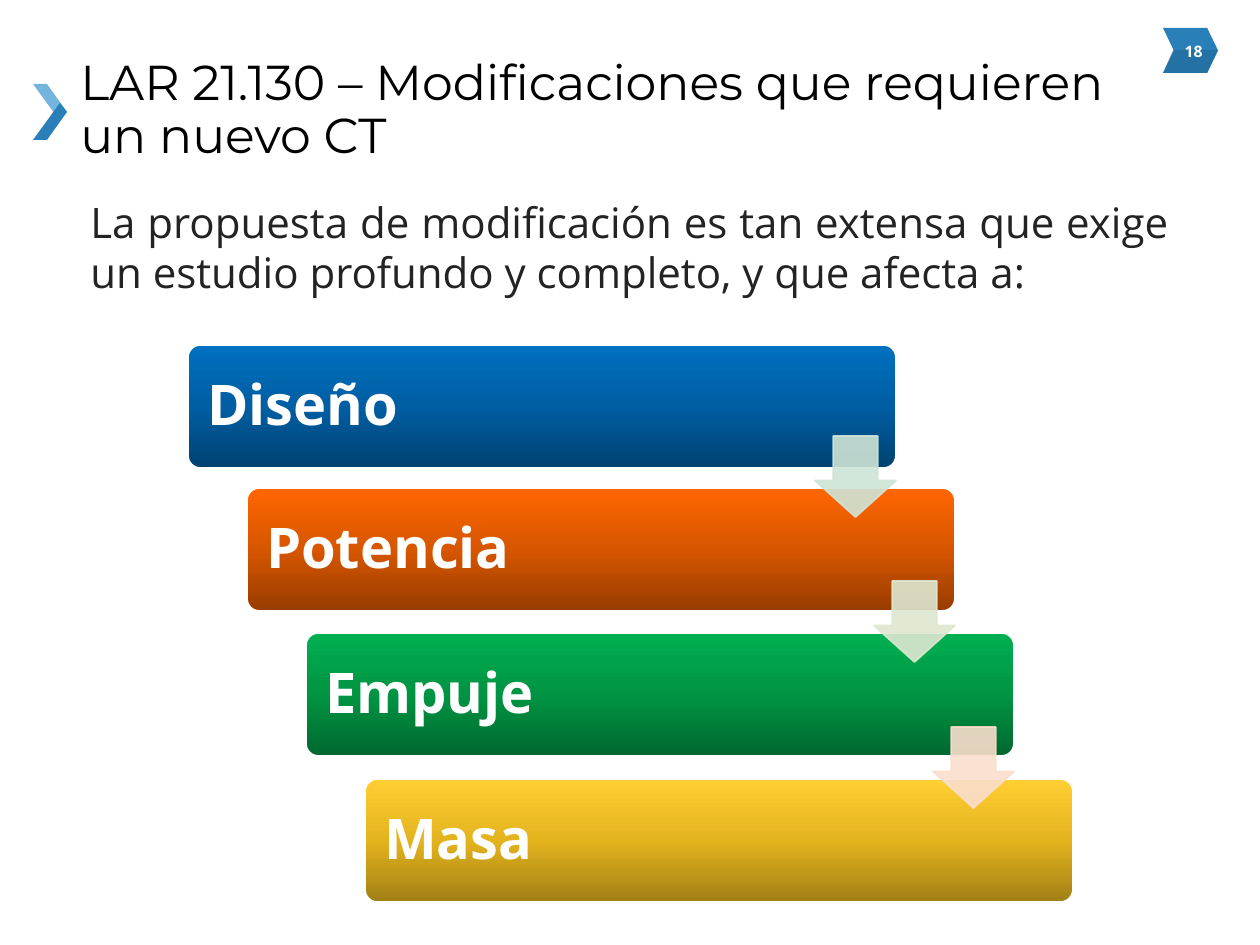
from typing import NamedTuple

from lxml import etree
from pptx import Presentation
from pptx.dml.color import RGBColor
from pptx.enum.shapes import MSO_SHAPE
from pptx.enum.text import MSO_ANCHOR, MSO_AUTO_SIZE, PP_ALIGN
from pptx.oxml.ns import qn
from pptx.util import Pt

PX = 914400 / 126
ROUND, CHEVRON, ARROW = MSO_SHAPE.ROUNDED_RECTANGLE, MSO_SHAPE.CHEVRON, MSO_SHAPE.DOWN_ARROW
MIDDLE, TOP = MSO_ANCHOR.MIDDLE, MSO_ANCHOR.TOP
LEFT, CENTER, JUSTIFY = PP_ALIGN.LEFT, PP_ALIGN.CENTER, PP_ALIGN.JUSTIFY
GROW = MSO_AUTO_SIZE.SHAPE_TO_FIT_TEXT

COLORS = {
    "black": "000000", "white": "FFFFFF", "text": "232323",
    "blue": "2980B9", "light": "74B5E0", "shade": "1F608B",
    "mint": "CFE4D6", "sage": "DEE7D1", "peach": "FADECC",
}


class Box(NamedTuple):
    left: int
    top: int
    width: int
    height: int

    def emu(self) -> list[int]:
        return [round(v * PX) for v in self]


class Label(NamedTuple):
    text: str
    box: Box
    font: dict
    color: str
    frame: dict
    para: dict


class Step(NamedTuple):
    name: str
    top: int
    stops: tuple[str, str, str]


class Outline(NamedTuple):
    color: str
    points: list[tuple[int, int]]
    alpha: int = 100


HEAD = {"name": "Montserrat", "size": Pt(28)}
BODY = {"name": "Open Sans", "size": Pt(24)}
BOLD = {"name": "Open Sans", "size": Pt(32), "bold": True}
PAGE = {"name": "Open Sans", "size": Pt(9), "bold": True}
PAD = round(16 * PX)
INSET = {f"margin_{side}": PAD for side in ("left", "right", "top", "bottom")}

LABELS = [
    Label("18", Box(1160, 32, 67, 38), PAGE, "white",
          {"vertical_anchor": MIDDLE}, {"alignment": CENTER}),
    Label("LAR 21.130 – Modificaciones que requieren un nuevo CT",
          Box(68, 50, 1086, 123), HEAD, "black",
          {"vertical_anchor": MIDDLE}, {"alignment": LEFT, "line_spacing": 0.9}),
    Label("La propuesta de modificación es tan extensa que exige un estudio "
          "profundo y completo, y que afecta a:",
          Box(78, 190, 1103, 115), BODY, "text",
          {"vertical_anchor": TOP, "auto_size": GROW}, {"alignment": JUSTIFY}),
]
OUTLINES = [
    Outline("shade", [(1173, 50), (1218, 50), (1207, 73), (1163, 73)], 45),
    Outline("light", [(33, 84), (60, 121), (67, 112), (47, 84)]),
    Outline("blue", [(33, 140), (60, 103), (67, 112), (47, 140)]),
]
STEPS = [
    Step("Diseño", 345, ("004272", "005EA2", "0070C0")),
    Step("Potencia", 488, ("973C00", "D75600", "FF6600")),
    Step("Empuje", 633, ("00682F", "009443", "00B050")),
    Step("Masa", 779, ("A07F15", "E4B41E", "FFCE33")),
]
ARROWS = ["mint", "sage", "peach"]
BAR_X, BAR_W, BAR_H, SHIFT = 188, 708, 123, 59
ARROW_W, RISE = 81, 52


def rgb(name: str) -> RGBColor:
    return RGBColor.from_string(COLORS[name])


def fade(node, alpha: int) -> None:
    """Set the opacity, in percent, of a solid fill's colour."""
    for color in node.findall(qn("a:solidFill") + "/" + qn("a:srgbClr")):
        etree.SubElement(color, qn("a:alpha"), val=str(alpha * 1000))


def paint(shape, color: str, alpha: int = 100) -> None:
    shape.shadow.inherit = False
    shape.fill.solid()
    shape.fill.fore_color.rgb = rgb(color)
    shape.line.fill.background()
    if alpha < 100:
        fade(shape.fill._xPr, alpha)


def edge(shape, color: str) -> None:
    shape.line.color.rgb = rgb(color)
    shape.line.width = Pt(1)


def blend(shape, stops: tuple[str, ...]) -> None:
    """Fill with evenly spaced colours, from bottom to top."""
    shape.fill.gradient()
    shape.fill.gradient_angle = 90
    group = shape.fill._xPr.find(qn("a:gradFill")).find(qn("a:gsLst"))
    for old in list(group):
        group.remove(old)
    for i, color in enumerate(stops):
        place = round(100000 * i / (len(stops) - 1))
        stop = etree.SubElement(group, qn("a:gs"), pos=str(place))
        etree.SubElement(stop, qn("a:srgbClr"), val=color)


def write(slide, label: Label) -> None:
    frame = slide.shapes.add_textbox(*label.box.emu()).text_frame
    para = frame.paragraphs[0]
    run = para.add_run()
    run.text = label.text
    run.font.color.rgb = rgb(label.color)
    formats = [(frame, {"word_wrap": True} | label.frame),
               (para, label.para), (run.font, label.font)]
    for item, values in formats:
        for key, value in values.items():
            setattr(item, key, value)


def trace(slide, outline: Outline) -> None:
    start, *rest = outline.points
    form = slide.shapes.build_freeform(*start, scale=PX)
    form.add_line_segments(rest, close=True)
    paint(form.convert_to_shape(), outline.color, outline.alpha)


def draw_bar(slide, step: Step, left: int) -> None:
    bar = slide.shapes.add_shape(ROUND, *Box(left, step.top, BAR_W, BAR_H).emu())
    bar.adjustments[0] = 0.1
    bar.shadow.inherit = False
    blend(bar, step.stops)
    edge(bar, "white")
    box = Box(left + 3, step.top + 4, 562, 116)
    write(slide, Label(step.name, box, BOLD, "white",
                       {"vertical_anchor": MIDDLE} | INSET,
                       {"alignment": LEFT, "line_spacing": 0.9}))


def draw_arrow(slide, color: str, left: int, top: int) -> None:
    arrow = slide.shapes.add_shape(ARROW, *Box(left, top, ARROW_W, ARROW_W).emu())
    arrow.adjustments[0], arrow.adjustments[1] = 0.55, 0.45
    paint(arrow, color, 90)
    edge(arrow, color)
    fade(arrow.line.fill._xPr, 90)


def main() -> None:
    deck = Presentation()
    deck.slide_width, deck.slide_height = Box(0, 0, 1260, 945).emu()[2:]
    slide = deck.slides.add_slide(deck.slide_layouts[6])

    badge = slide.shapes.add_shape(CHEVRON, *Box(1163, 28, 55, 45).emu())
    badge.adjustments[0] = 0.24
    paint(badge, "blue")
    for outline in OUTLINES:
        trace(slide, outline)
    for label in LABELS:
        write(slide, label)

    for i, step in enumerate(STEPS):
        draw_bar(slide, step, BAR_X + i * SHIFT)
    for i, (color, below) in enumerate(zip(ARROWS, STEPS[1:])):
        right = BAR_X + i * SHIFT + BAR_W
        draw_arrow(slide, color, right - ARROW_W, below.top - RISE)

    deck.save("out.pptx")


if __name__ == "__main__":
    main()
